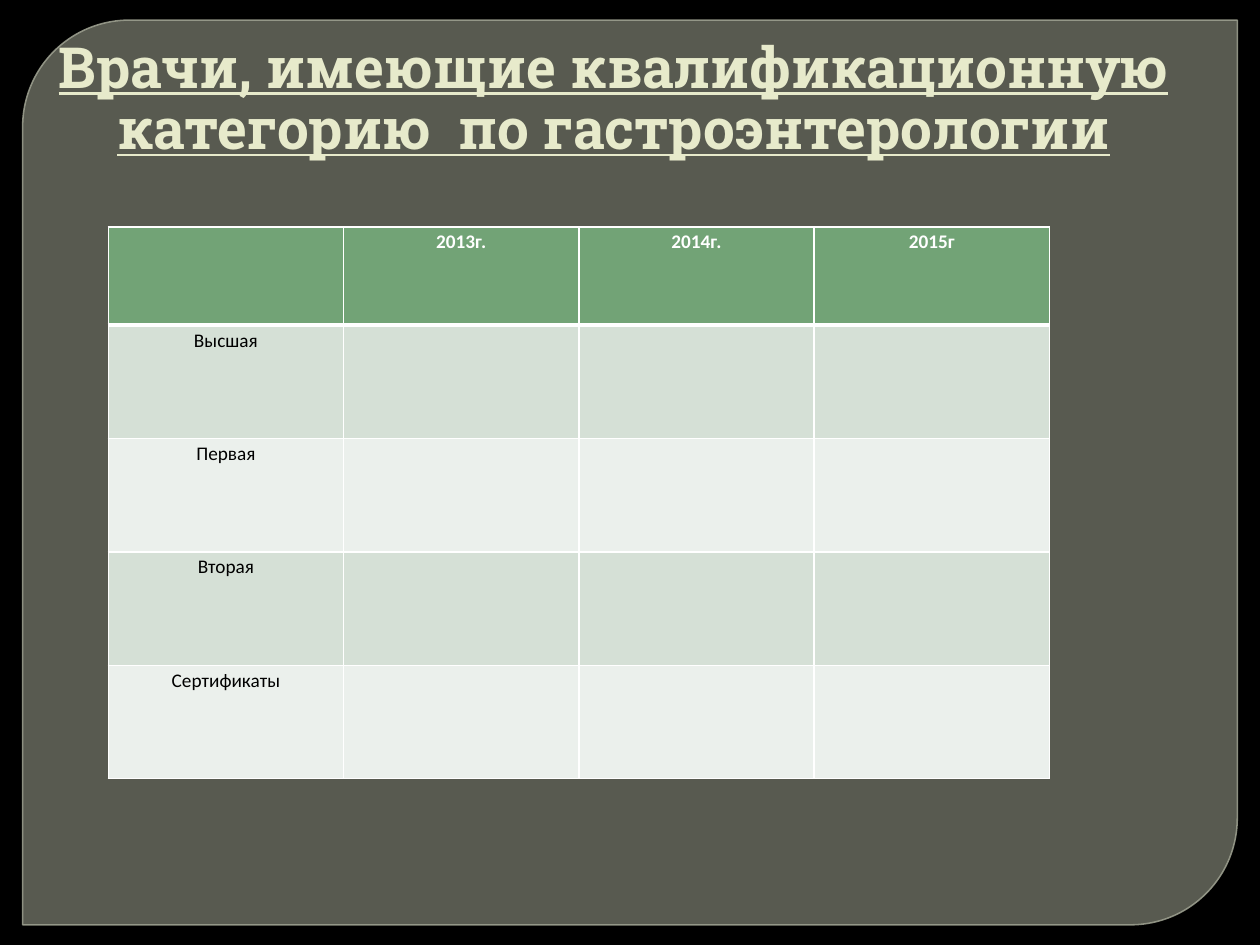
from dataclasses import dataclass

from lxml.etree import SubElement
from pptx import Presentation
from pptx.dml.color import RGBColor
from pptx.enum.shapes import MSO_SHAPE
from pptx.enum.text import MSO_ANCHOR, PP_ALIGN
from pptx.oxml.ns import qn
from pptx.util import Inches, Pt


@dataclass(frozen=True)
class Theme:
    background: str = "000000"
    panel: str = "888B7B"
    panel_line: str = "9DA090"
    title: str = "E7EACB"
    header: str = "72A376"
    header_text: str = "FFFFFF"
    bands: tuple = ("D5E0D6", "EBF0EC")
    body_text: str = "000000"
    border: str = "FFFFFF"
    title_font: str = "Roboto Slab"
    table_font: str = "Calibri"
    title_size: float = 32.4
    table_size: float = 11


THEME = Theme()
TITLE = "Врачи, имеющие квалификационную категорию  по гастроэнтерологии"
YEARS = ["2013г.", "2014г.", "2015г"]
CATEGORIES = ["Высшая", "Первая", "Вторая", "Сертификаты"]


def rgb(value):
    return RGBColor.from_string(value)


def set_opacity(color, percent):
    SubElement(color, qn("a:alpha"), val=str(percent * 1000))


def style_runs(paragraph, font_name, size, color, bold):
    for run in paragraph.runs:
        run.font.name = font_name
        run.font.size = Pt(size)
        run.font.color.rgb = rgb(color)
        run.font.bold = bold


def add_panel(slide, left, top, width, height):
    panel = slide.shapes.add_shape(
        MSO_SHAPE.ROUND_2_DIAG_RECTANGLE, left, top, width, height)
    panel.adjustments[0] = 0.118
    panel.adjustments[1] = 0
    panel.shadow.inherit = False
    panel.fill.solid()
    panel.fill.fore_color.rgb = rgb(THEME.panel)
    panel.line.color.rgb = rgb(THEME.panel_line)
    panel.line.width = Pt(0.87)
    fill_color, line_color = panel._element.spPr.iter(qn("a:srgbClr"))
    set_opacity(fill_color, 65)
    set_opacity(line_color, 88)
    # The title placeholder already exists, so the panel goes behind it.
    slide.shapes._spTree.insert(2, panel._element)


def place_title(slide, left, top, width, height):
    title = slide.shapes.title
    title.left, title.top, title.width, title.height = left, top, width, height
    frame = title.text_frame
    frame.text = TITLE
    frame.word_wrap = True
    frame.vertical_anchor = MSO_ANCHOR.TOP
    frame.margin_top = 0
    frame.margin_left = Inches(0.15)
    paragraph = frame.paragraphs[0]
    paragraph.alignment = PP_ALIGN.CENTER
    paragraph.line_spacing = 0.9
    style_runs(paragraph, THEME.title_font, THEME.title_size, THEME.title, True)
    paragraph.runs[0].font.underline = True


def set_borders(cell, widths):
    properties = cell._tc.get_or_add_tcPr()
    for side, width in zip("LRTB", widths):
        line = SubElement(properties, qn(f"a:ln{side}"), w=str(Pt(width)))
        fill = SubElement(line, qn("a:solidFill"))
        SubElement(fill, qn("a:srgbClr"), val=THEME.border)


def format_cell(cell, text, fill, color, bold, borders):
    set_borders(cell, borders)
    cell.fill.solid()
    cell.fill.fore_color.rgb = rgb(fill)
    if not text:
        return
    cell.margin_left = cell.margin_right = Inches(0.07)
    cell.margin_top = cell.margin_bottom = 0
    cell.text_frame.text = text
    paragraph = cell.text_frame.paragraphs[0]
    paragraph.alignment = PP_ALIGN.CENTER
    paragraph.line_spacing = 1.15
    paragraph.space_after = Pt(10)
    style_runs(paragraph, THEME.table_font, THEME.table_size, color, bold)


def add_category_table(slide, left, top, width, height):
    rows = [["", *YEARS]] + [[name] + [""] * len(YEARS) for name in CATEGORIES]
    table = slide.shapes.add_table(
        len(rows), len(rows[0]), left, top, width, height).table
    header_height = Inches(0.78)
    for index, row in enumerate(table.rows):
        row.height = (header_height if index == 0
                      else (height - header_height) // len(CATEGORIES))
    for r, row in enumerate(rows):
        for c, text in enumerate(row):
            if r == 0:
                look = THEME.header, THEME.header_text, True, (1, 1, 1, 3)
            else:
                top_border = 3 if r == 1 else 1
                look = (THEME.bands[(r - 1) % 2], THEME.body_text, False,
                        (1, 1, top_border, 1))
            format_cell(table.cell(r, c), text, *look)


def main():
    presentation = Presentation()
    presentation.slide_width = Inches(10)
    presentation.slide_height = Inches(7.5)
    slide = presentation.slides.add_slide(presentation.slide_layouts[5])
    slide.background.fill.solid()
    slide.background.fill.fore_color.rgb = rgb(THEME.background)
    add_panel(slide, Inches(0.18), Inches(0.16), Inches(9.64), Inches(7.18))
    place_title(slide, Inches(0), Inches(0.31), Inches(9.69), Inches(1.64))
    add_category_table(
        slide, Inches(0.86), Inches(1.8), Inches(7.47), Inches(4.38))
    presentation.save("out.pptx")


if __name__ == "__main__":
    main()
